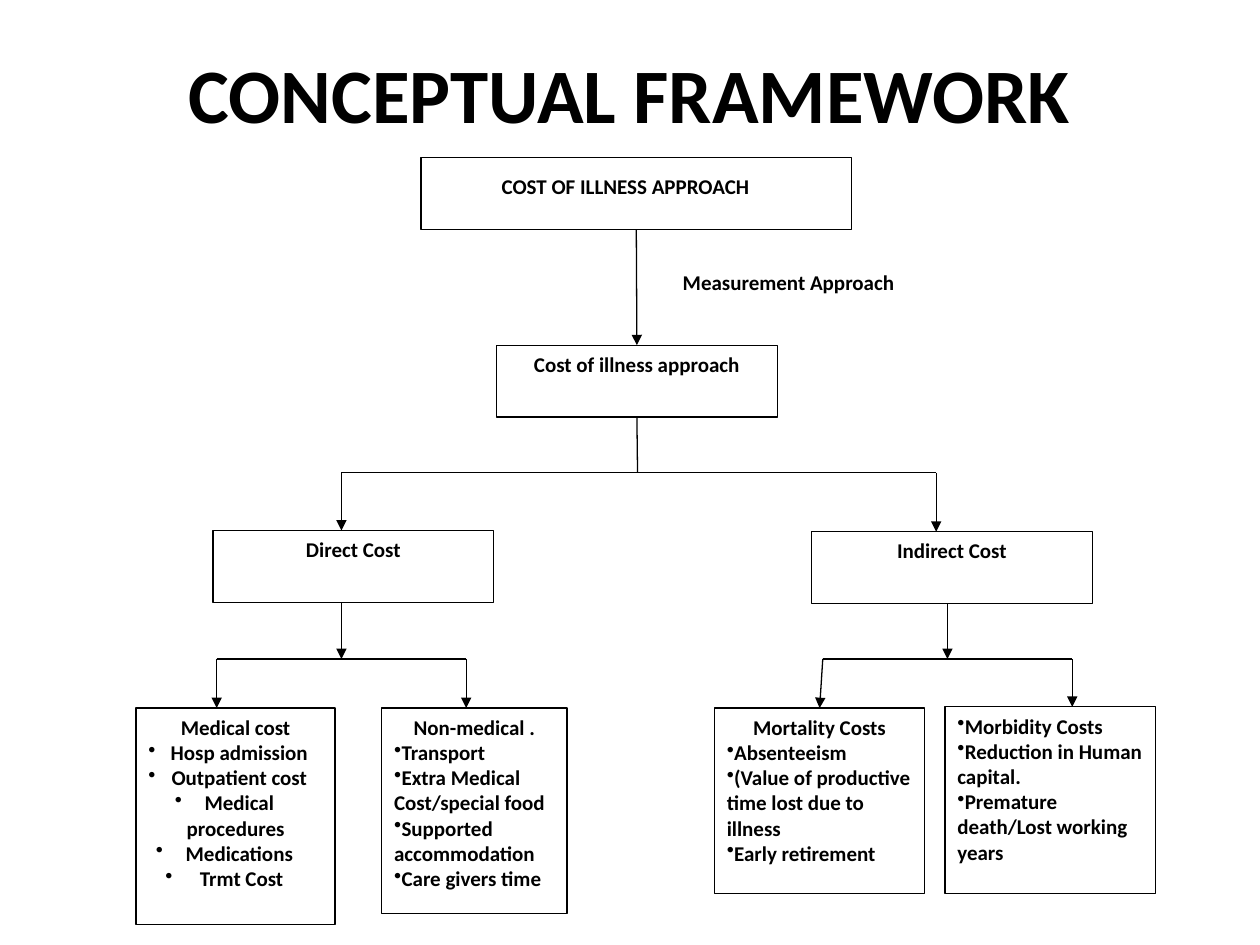
from lxml.etree import SubElement
from pptx import Presentation
from pptx.dml.color import RGBColor
from pptx.enum.shapes import MSO_CONNECTOR as CONN, MSO_SHAPE as SHAPE
from pptx.enum.text import MSO_ANCHOR as ANCHOR, PP_ALIGN as ALIGN
from pptx.oxml.ns import qn
from pptx.util import Inches, Pt

# Content
TITLE = "CONCEPTUAL FRAMEWORK"
ROOT = "COST OF ILLNESS APPROACH"
METHOD = "Cost of illness approach"
LABEL = "Measurement Approach"
# Heading, bullets, centred bullets, bulleted heading, box (left, top, width, height)
BRANCHES = [
    {"name": "Direct Cost", "left": 1.69, "top": 4.21, "drop": 2.71, "stem": 2.71, "leaves": [
        ("Medical cost", ["Hosp admission", "Outpatient cost", "Medical procedures",
                          "Medications", " Trmt Cost"], True, False, (1.08, 5.62, 1.58, 1.72)),
        ("Non-medical .", ["Transport", "Extra Medical Cost/special food",
                           "Supported accommodation", "Care givers time"],
         False, False, (3.03, 5.62, 1.47, 1.63))]},
    {"name": "Indirect Cost", "left": 6.44, "top": 4.22, "drop": 7.43, "stem": 7.52, "leaves": [
        ("Mortality Costs", ["Absenteeism", "(Value of productive time lost due to illness",
                             "Early retirement"], False, False, (5.67, 5.62, 1.67, 1.47)),
        ("Morbidity Costs", ["Reduction in Human capital.", "Premature death/Lost working years"],
         False, True, (7.5, 5.61, 1.67, 1.48))]},
]
COLORS = {"ink": "000000", "paper": "FFFFFF"}
FONT = "Calibri"

# Grid
BOX_W, BOX_H = 2.23, 0.57
AXIS = 5.06
FORK_Y, LEAF_FORK_Y = 3.75, 5.23
FORK_HALF = 0.99

prs = Presentation()
prs.slide_width, prs.slide_height = Inches(10), Inches(7.5)
s = prs.slides.add_slide(prs.slide_layouts[6])


def ink(name):
    return RGBColor.from_string(COLORS[name])


def write(tf, text, size=12, align=ALIGN.CENTER, bullet=False, first=True):
    p = tf.paragraphs[0] if first else tf.add_paragraph()
    p.alignment = align
    if bullet:
        SubElement(p._p.get_or_add_pPr(), qn("a:buChar"), char="•")
    r = p.add_run()
    r.text = text
    r.font.name, r.font.size, r.font.bold = FONT, Pt(size), True
    r.font.color.rgb = ink("ink")


def text_box(text, *at, anchor=ANCHOR.TOP, wrap=True, **fmt):
    tf = s.shapes.add_textbox(*map(Inches, at)).text_frame
    tf.word_wrap, tf.vertical_anchor = wrap, anchor
    write(tf, text, **fmt)


def box(*at):
    sp = s.shapes.add_shape(SHAPE.RECTANGLE, *map(Inches, at))
    sp.shadow.inherit = False
    sp.fill.solid()
    sp.fill.fore_color.rgb = ink("paper")
    sp.line.color.rgb = ink("ink")
    sp.line.width = Pt(0.75)
    sp.text_frame.word_wrap = True
    sp.text_frame.vertical_anchor = ANCHOR.TOP
    return sp


def line(x1, y1, x2, y2, arrow=False, begin=None, end=None):
    c = s.shapes.add_connector(CONN.STRAIGHT, *map(Inches, (x1, y1, x2, y2)))
    c.line.color.rgb = ink("ink")
    c.line.width = Pt(0.75)
    if arrow:
        SubElement(c.line._get_or_add_ln(), qn("a:tailEnd"), type="triangle")
    SubElement(c._element.spPr, qn("a:effectLst"))
    if begin is not None:
        c.begin_connect(begin, 2)
    if end is not None:
        c.end_connect(end, 0)


# Title
text_box(TITLE, 0.5, 0.3, 9, 0.87, size=44, anchor=ANCHOR.MIDDLE)

# Trunk
root = box(3.34, 1.25, 3.42, BOX_H)
method = box(3.94, 2.74, BOX_W, BOX_H)
write(method.text_frame, METHOD)
line(AXIS, 1.82, AXIS, 2.74, arrow=True, begin=root, end=method)
text_box(LABEL, 5.32, 2.09, 2.11, 0.5, align=ALIGN.LEFT)
line(AXIS, 3.31, AXIS, FORK_Y, begin=method)
line(BRANCHES[0]["drop"], FORK_Y, BRANCHES[1]["drop"], FORK_Y)

# Branches and their leaves
for b in BRANCHES:
    top, stem = b["top"], b["stem"]
    write(box(b["left"], top, BOX_W, BOX_H).text_frame, b["name"])
    line(b["drop"], FORK_Y, b["drop"], top, arrow=True)
    line(stem, top + BOX_H, stem, LEAF_FORK_Y, arrow=True)
    line(stem - FORK_HALF, LEAF_FORK_Y, stem + FORK_HALF, LEAF_FORK_Y)
    for side, (head, items, centred, head_bullet, at) in zip((-1, 1), b["leaves"]):
        leaf = box(*at)
        tf = leaf.text_frame
        write(tf, head, align=ALIGN.LEFT if head_bullet else ALIGN.CENTER, bullet=head_bullet)
        for item in items:
            write(tf, item, align=ALIGN.CENTER if centred else ALIGN.LEFT,
                  bullet=True, first=False)
        x = stem + side * FORK_HALF
        at_middle = abs(x - at[0] - at[2] / 2) < 0.05
        line(x, LEAF_FORK_Y, x, at[1], arrow=True, end=leaf if at_middle else None)

# Root caption
text_box(ROOT, 3.83, 1.33, 2.27, 0.3, wrap=False)

prs.save("out.pptx")
